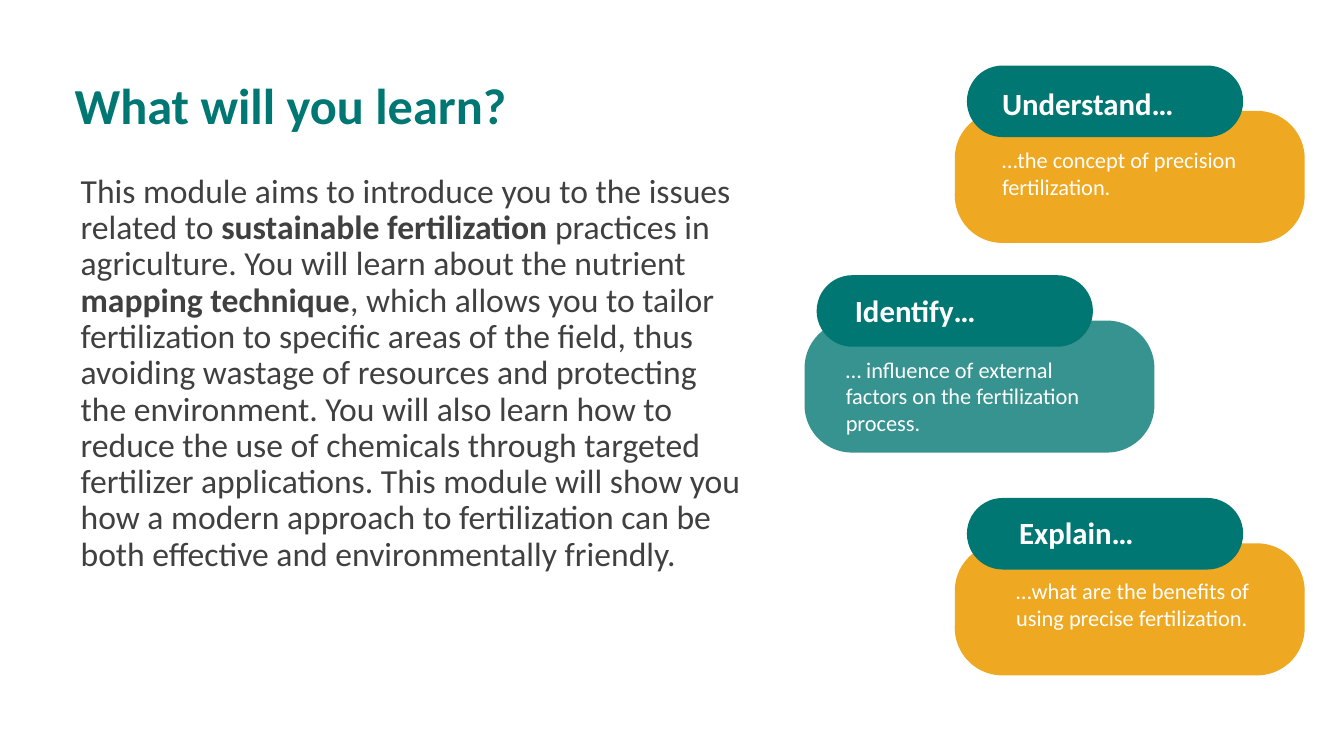
from dataclasses import dataclass

from pptx import Presentation
from pptx.dml.color import RGBColor
from pptx.enum.shapes import MSO_SHAPE
from pptx.enum.text import MSO_ANCHOR, MSO_AUTO_SIZE, PP_ALIGN
from pptx.oxml.ns import qn
from pptx.util import Inches, Pt
from lxml.etree import SubElement


@dataclass(frozen=True)
class Theme:
    font: str = "Calibri"
    teal: str = "007772"
    amber: str = "EEA821"
    white: str = "FFFFFF"
    grey: str = "404040"
    title_size: int = 36
    intro_size: int = 24
    heading_size: int = 22
    detail_size: int = 16


THEME = Theme()


@dataclass(frozen=True)
class Goal:
    heading: str
    detail: str
    left: float
    top: float
    fill: str
    opacity: int
    heading_box: tuple  # left and top offsets, width, height
    detail_box: tuple


GOALS = [
    Goal("Understand…", "…the concept of precision fertilization.",
         9.47, 0.65, THEME.amber, 100,
         (0.37, 0.14, 2.74, 0.47), (0.37, 0.75, 2.85, 0.64)),
    Goal("Identify…", "… influence of external factors on the fertilization process.",
         7.98, 2.73, THEME.teal, 79,
         (0.4, 0.12, 2.22, 0.47), (0.31, 0.75, 2.85, 0.91)),
    Goal("Explain…", "…what are the benefits of using precise fertilization.",
         9.47, 4.94, THEME.amber, 100,
         (0.54, 0.11, 2.12, 0.47), (0.51, 0.74, 2.85, 0.64)),
]

# Each run is its text and whether it is bold
INTRO = [
    ("This module aims to introduce you to the issues related to ", False),
    ("sustainable fertilization ", True),
    ("practices in agriculture. You will learn about the nutrient ", False),
    ("mapping technique", True),
    (", which allows you to tailor fertilization to specific areas of the field, "
     "thus avoiding wastage of resources and protecting the environment. You will "
     "also learn how to reduce the use of chemicals through targeted fertilizer "
     "applications. This module will show you how a modern approach to "
     "fertilization can be both effective and environmentally friendly.", False),
]


def set_font(paragraph, size, color, bold=None):
    font = paragraph.font
    font.name = THEME.font
    font.size = Pt(size)
    font.color.rgb = RGBColor.from_string(color)
    if bold is not None:
        font.bold = bold


def fill_placeholder(holder, box, runs, size, color):
    holder.left, holder.top, holder.width, holder.height = map(Inches, box)
    frame = holder.text_frame
    frame.word_wrap = True
    frame.auto_size = MSO_AUTO_SIZE.NONE
    frame.vertical_anchor = MSO_ANCHOR.TOP
    paragraph = frame.paragraphs[0]
    paragraph.alignment = PP_ALIGN.LEFT
    paragraph.line_spacing = 0.9
    paragraph.space_before = Pt(0)
    # No bullet and no hanging indent
    properties = paragraph._p.get_or_add_pPr()
    properties.set("marL", "0")
    properties.set("indent", "0")
    SubElement(properties, qn("a:buNone"))
    set_font(paragraph, size, color)
    for text, bold in runs:
        run = paragraph.add_run()
        run.text = text
        run.font.bold = bold


def add_pill(slide, box, rounding, color, opacity=100):
    pill = slide.shapes.add_shape(MSO_SHAPE.ROUNDED_RECTANGLE, *map(Inches, box))
    pill.adjustments[0] = rounding
    pill.shadow.inherit = False
    pill.line.fill.background()
    pill.fill.solid()
    pill.fill.fore_color.rgb = RGBColor.from_string(color)
    if opacity < 100:
        tint = pill.fill._xPr.find(".//" + qn("a:srgbClr"))
        SubElement(tint, qn("a:alpha")).set("val", str(opacity * 1000))


def add_text(slide, box, text, size, bold):
    frame = slide.shapes.add_textbox(*map(Inches, box)).text_frame
    frame.word_wrap = True
    frame.auto_size = MSO_AUTO_SIZE.SHAPE_TO_FIT_TEXT
    frame.text = text
    set_font(frame.paragraphs[0], size, THEME.white, bold)


def add_goal(slide, goal):
    def placed(dx, dy, width, height):
        return goal.left + dx, goal.top + dy, width, height

    # Card with its tab on top, then their texts
    add_pill(slide, placed(0, 0.45, 3.47, 1.31), 0.36, goal.fill, goal.opacity)
    add_pill(slide, placed(0.12, 0, 2.74, 0.71), 0.5, THEME.teal)
    add_text(slide, placed(*goal.heading_box), goal.heading, THEME.heading_size, True)
    add_text(slide, placed(*goal.detail_box), goal.detail, THEME.detail_size, False)


def main():
    deck = Presentation()
    deck.slide_width, deck.slide_height = Inches(13.33), Inches(7.5)
    slide = deck.slides.add_slide(deck.slide_layouts[1])

    # Title and introduction
    fill_placeholder(slide.shapes.title, (0.64, 0.75, 8, 0.71),
                     [("What will you learn?", True)], THEME.title_size, THEME.teal)
    fill_placeholder(slide.placeholders[1], (0.7, 1.68, 6.8, 5.41),
                     INTRO, THEME.intro_size, THEME.grey)

    # Learning goals
    for goal in GOALS:
        add_goal(slide, goal)

    deck.save("out.pptx")


if __name__ == "__main__":
    main()
